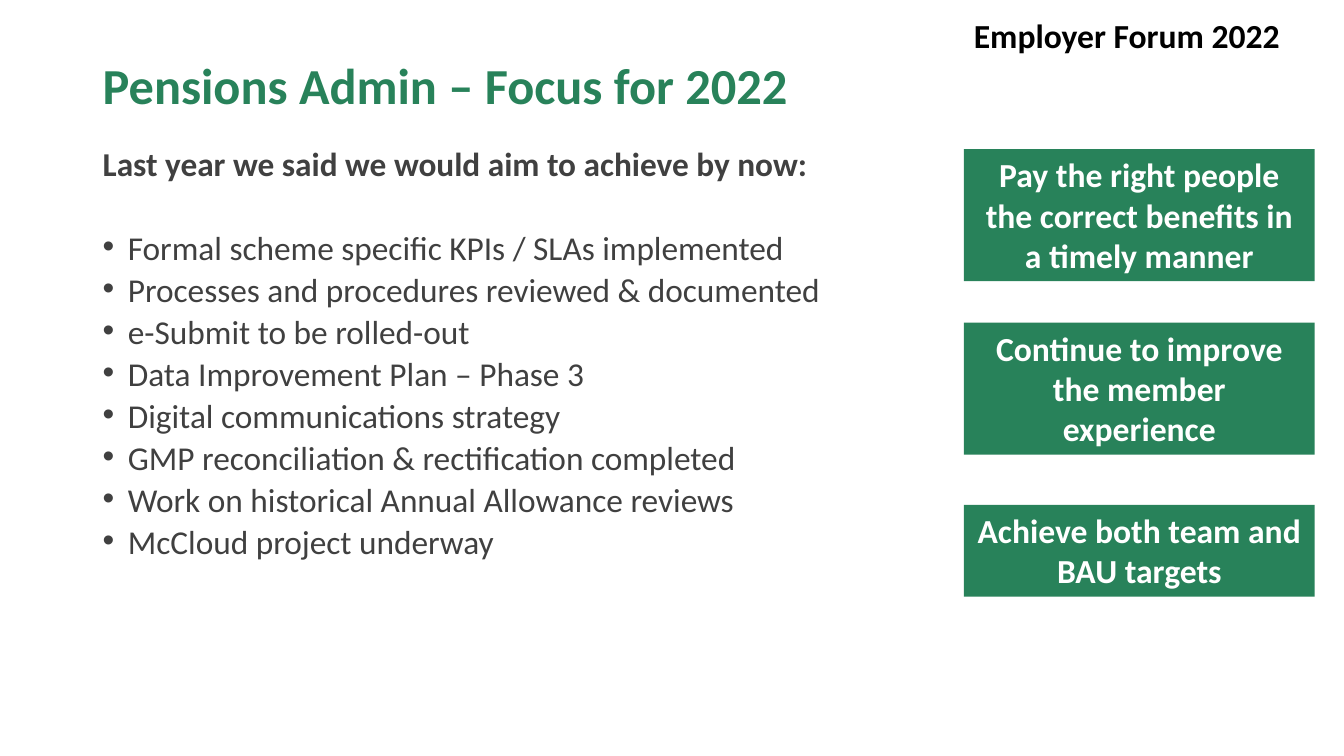
from lxml import etree
from pptx import Presentation
from pptx.dml.color import RGBColor
from pptx.enum.shapes import MSO_SHAPE
from pptx.enum.text import MSO_ANCHOR, PP_ALIGN
from pptx.oxml.ns import qn
from pptx.util import Inches, Pt

RECTANGLE = MSO_SHAPE.RECTANGLE
MIDDLE, TOP = MSO_ANCHOR.MIDDLE, MSO_ANCHOR.TOP
LEFT, CENTER = PP_ALIGN.LEFT, PP_ALIGN.CENTER

GREEN, GREY, BLACK, WHITE = "28825A", "404040", "000000", "FFFFFF"
MAIN_LEFT, SIDE_LEFT, SIDE_WIDTH = 0.92, 9.56, 3.48
CONTENT_TOP = 1.48
INDENT = 0.25


def color(hex_code):
    return RGBColor.from_string(hex_code)


def write(para, text, size, hex_code, bold=True, **layout):
    for name, value in layout.items():
        setattr(para, name, value)
    span = para.add_run()
    span.text = text
    span.font.color.rgb = color(hex_code)
    look = {"name": "Calibri", "size": Pt(size), "bold": bold}
    for name, value in look.items():
        setattr(span.font, name, value)


deck = Presentation()
deck.slide_width, deck.slide_height = Inches(13.33), Inches(7.5)
page = deck.slides.add_slide(deck.slide_layouts[6])

# Text areas: title, body and event name
areas = [
    (MAIN_LEFT, 0.38, 11.5, 0.98, MIDDLE),
    (MAIN_LEFT, CONTENT_TOP, 8.19, 5.3, TOP),
    (SIDE_LEFT, 0.1, SIDE_WIDTH, 0.5, TOP),
]
frames = []
for *place, anchor in areas:
    frame = page.shapes.add_textbox(*map(Inches, place)).text_frame
    frame.word_wrap = True
    frame.vertical_anchor = anchor
    frames.append(frame)
title, body, event = frames

write(title.paragraphs[0], "Pensions Admin – Focus for 2022", 36, GREEN, line_spacing=0.9)
write(event.paragraphs[0], "Employer Forum 2022", 24, BLACK)

# Body: lead-in line and bulleted aims
aims = [
    "Formal scheme specific KPIs / SLAs implemented",
    "Processes and procedures reviewed & documented",
    "e-Submit to be rolled-out",
    "Data Improvement Plan – Phase 3",
    "Digital communications strategy",
    "GMP reconciliation & rectification completed",
    "Work on historical Annual Allowance reviews",
    "McCloud project underway",
]
write(body.paragraphs[0], "Last year we said we would aim to achieve by now:",
      23.8, GREY, line_spacing=0.7)
for number, aim in enumerate(aims):
    para = body.add_paragraph()
    props = para._p.get_or_add_pPr()
    props.set("marL", str(Inches(INDENT)))
    props.set("indent", str(-Inches(INDENT)))
    etree.SubElement(props, qn("a:buFont"), typeface="Arial")
    etree.SubElement(props, qn("a:buChar"), char="•")
    write(para, aim, 23.8, GREY, bold=False, line_spacing=0.7,
          space_before=Pt(10 if number else 40))

# Goal boxes in the side column
goals = [
    (CONTENT_TOP, 1.31, "Pay the right people the correct benefits in a timely manner"),
    (3.2, 1.31, "Continue to improve the member experience"),
    (5.01, 0.91, "Achieve both team and BAU targets"),
]
for top, height, goal in goals:
    box = page.shapes.add_shape(RECTANGLE, *map(Inches, (SIDE_LEFT, top, SIDE_WIDTH, height)))
    box.shadow.inherit = False
    box.fill.solid()
    box.fill.fore_color.rgb = color(GREEN)
    box.line.fill.background()
    box.text_frame.word_wrap = True
    box.text_frame.vertical_anchor = TOP
    write(box.text_frame.paragraphs[0], goal, 24, WHITE, alignment=CENTER)

deck.save("out.pptx")
